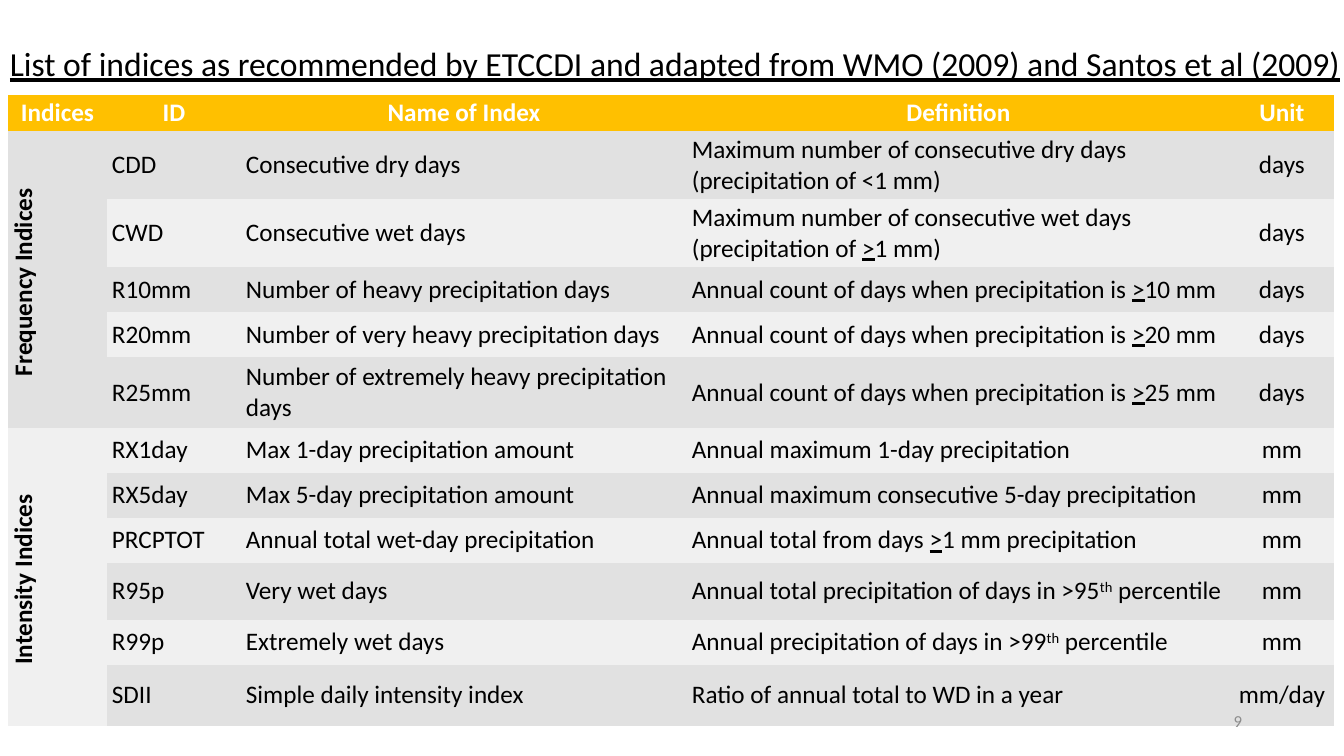
from dataclasses import dataclass

from pptx import Presentation
from pptx import util as u
from pptx.dml.color import RGBColor
from pptx.enum import text as t


@dataclass(frozen=True)
class Theme:
    font: str = "Calibri"
    ink: str = "000000"
    header_ink: str = "FFFFFF"
    muted: str = "8C8C8C"
    header: str = "FFC000"
    bands: tuple = ("E1E1E1", "F0F0F0")
    title_size: int = 24
    table_size: int = 18
    number_size: int = 12


THEME = Theme()
PLAIN_STYLE = "{2D5ABB26-0587-4C30-8999-92F81FD0307C}"
LEFT, CENTER, RIGHT = t.PP_ALIGN.LEFT, t.PP_ALIGN.CENTER, t.PP_ALIGN.RIGHT

# Content: pieces between bars are underlined (>) or raised (th)
HEADINGS = ("Indices", "ID", "Name of Index", "Definition", "Unit")
GROUPS = {
    "Frequency Indices ": [
        ("CDD", "Consecutive dry days",
         "Maximum number of consecutive dry days (precipitation of <1 mm)", "days"),
        ("CWD", "Consecutive wet days",
         "Maximum number of consecutive wet days (precipitation of |>|1 mm)", "days"),
        ("R10mm", "Number of heavy precipitation days",
         "Annual count of days when precipitation is |>|10 mm", "days"),
        ("R20mm", "Number of very heavy precipitation days",
         "Annual count of days when precipitation is |>|20 mm", "days"),
        ("R25mm", "Number of extremely heavy precipitation days",
         "Annual count of days when precipitation is |>|25 mm", "days"),
    ],
    "Intensity Indices ": [
        ("RX1day", "Max 1-day precipitation amount",
         "Annual maximum 1-day precipitation", "mm"),
        ("RX5day", "Max 5-day precipitation amount",
         "Annual maximum consecutive 5-day precipitation", "mm"),
        ("PRCPTOT", "Annual total wet-day precipitation",
         "Annual total from days |>|1 mm precipitation", "mm"),
        ("R95p", "Very wet days",
         "Annual total precipitation of days in >95|th| percentile", "mm"),
        ("R99p", "Extremely wet days",
         "Annual precipitation of days in >99|th| percentile", "mm"),
        ("SDII", "Simple daily intensity index",
         "Ratio of annual total to WD in a year", "mm/day"),
    ],
}
COLUMNS = (99, 134, 446, 543, 104)
ROWS = (36, 68, 68, 45, 45, 71, 45, 45, 45, 57, 45, 61)


def px(length):
    return u.Emu(round(length * 914400 / 100.8))


def write(frame, content, size, color=THEME.ink, bold=False, underline=False, align=LEFT):
    paragraph = frame.paragraphs[0]
    paragraph.alignment = align
    for index, piece in enumerate(content.split("|")):
        marked = index % 2 == 1
        run = paragraph.add_run()
        run.text = piece
        font = run.font
        font.name, font.size, font.bold = THEME.font, u.Pt(size), bold
        font.color.rgb = RGBColor.from_string(color)
        font.underline = underline or (marked and piece == ">")
        if marked and piece == "th":
            font._element.set("baseline", "30000")


class IndexSlide:
    def __init__(self, presentation, theme):
        self.theme = theme
        self.slide = presentation.slides.add_slide(presentation.slide_layouts[6])

    def label(self, content, box, wrap=True, anchor=t.MSO_ANCHOR.TOP, **style):
        frame = self.slide.shapes.add_textbox(*map(px, box)).text_frame
        frame.word_wrap = wrap
        frame.vertical_anchor = anchor
        write(frame, content, **style)

    def grid(self, left, top, columns, rows):
        shape = self.slide.shapes.add_table(
            len(rows), len(columns), px(left), px(top), px(sum(columns)), px(sum(rows)))
        table = shape.table
        table.first_row = table.horz_banding = False
        table._tbl.tblPr.find("{*}tableStyleId").text = PLAIN_STYLE
        for column, width in zip(table.columns, columns):
            column.width = px(width)
        for row, height in zip(table.rows, rows):
            row.height = px(height)
        return table

    def cell(self, cell, content, fill, vertical=False, **style):
        cell.fill.solid()
        cell.fill.fore_color.rgb = RGBColor.from_string(fill)
        cell.vertical_anchor = t.MSO_ANCHOR.MIDDLE
        cell.margin_left = cell.margin_right = px(5)
        cell.margin_top = cell.margin_bottom = 0
        if vertical:
            cell._tc.get_or_add_tcPr().set("vert", "vert270")
        write(cell.text_frame, content, self.theme.table_size, **style)

    def index_table(self):
        table = self.grid(8, 95, COLUMNS, ROWS)
        for column, heading in enumerate(HEADINGS):
            self.cell(table.cell(0, column), heading, self.theme.header,
                      color=self.theme.header_ink, bold=True, align=CENTER)
        row = 1
        for group, indices in GROUPS.items():
            group_cell = table.cell(row, 0)
            group_cell.merge(table.cell(row + len(indices) - 1, 0))
            self.cell(group_cell, group, self.theme.bands[(row - 1) % 2],
                      vertical=True, bold=True, align=CENTER)
            for values in indices:
                for column, value in enumerate(values, 1):
                    self.cell(table.cell(row, column), value,
                              self.theme.bands[(row - 1) % 2],
                              align=CENTER if column == len(values) else LEFT)
                row += 1


def main():
    presentation = Presentation()
    presentation.slide_width, presentation.slide_height = px(1344), px(756)
    page = IndexSlide(presentation, THEME)

    # Table of indices
    page.index_table()

    # Title
    page.label("List of indices as recommended by ETCCDI and adapted from "
               "WMO (2009) and Santos et al (2009)", (0, 38, 1362, 50), wrap=False,
               size=THEME.title_size, underline=True)

    # Slide number
    page.label("9", (950, 701, 302, 40), anchor=t.MSO_ANCHOR.MIDDLE,
               size=THEME.number_size, color=THEME.muted, align=RIGHT)

    presentation.save("out.pptx")


if __name__ == "__main__":
    main()
